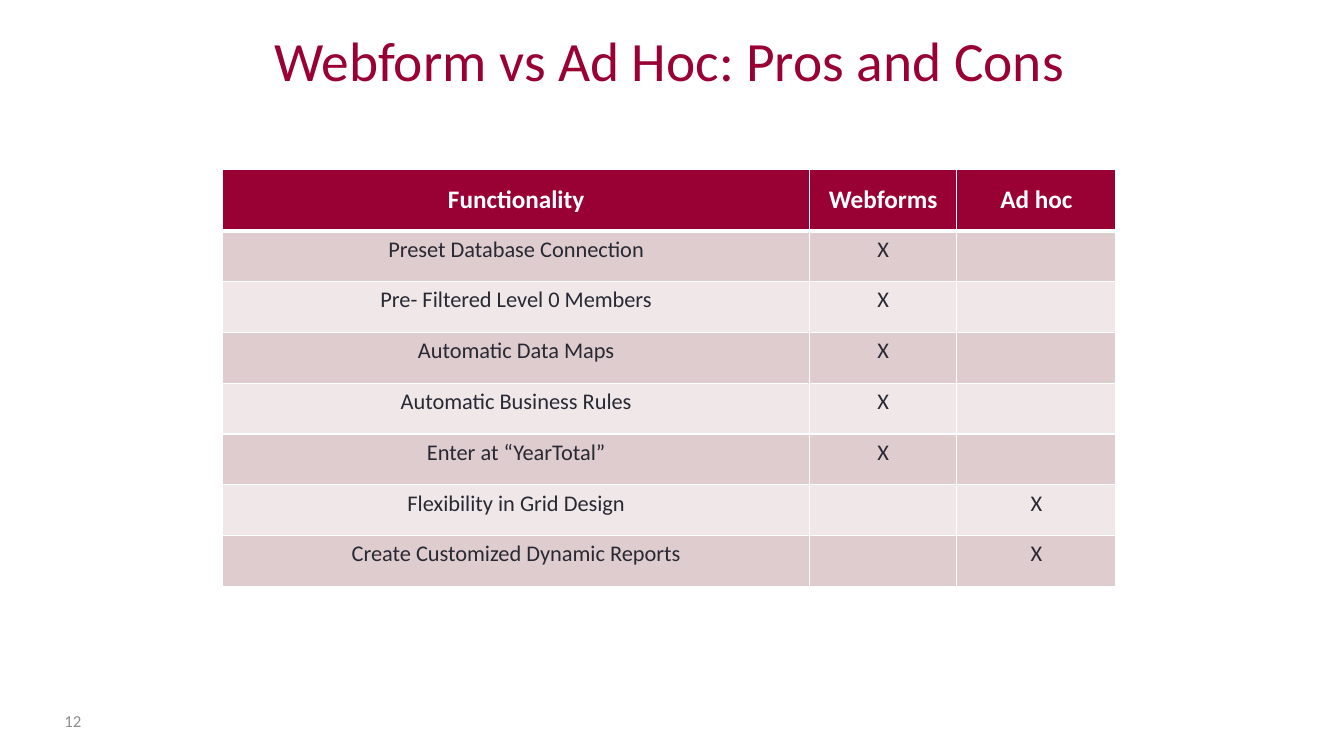
from lxml import etree
from pptx import Presentation, util as u
from pptx.dml.color import RGBColor
from pptx.enum import text
from pptx.oxml import ns

COLORS = {
    "crimson": "990033", "white": "FFFFFF", "ink": "292934",
    "gray": "8E8E90", "dark band": "DECCCE", "light band": "EFE7E8",
}
FONT = "Calibri"
HEADINGS = ["Functionality", "Webforms", "Ad hoc"]
FEATURES = [
    ("Preset Database Connection", "X", ""),
    ("Pre- Filtered Level 0 Members", "X", ""),
    ("Automatic Data Maps", "X", ""),
    ("Automatic Business Rules", "X", ""),
    ("Enter at “YearTotal”", "X", ""),
    ("Flexibility in Grid Design", "", "X"),
    ("Create Customized Dynamic Reports", "", "X"),
]
COLUMN_WIDTHS = [5.82, 1.46, 1.58]
HEADER_HEIGHT, ROW_HEIGHT = 0.61, 0.504


def write(frame, words, size, color, align, bold=False):
    frame.text = words
    paragraph = frame.paragraphs[0]
    paragraph.alignment = align
    for run in paragraph.runs:
        run.font.name = FONT
        run.font.size = u.Pt(size)
        run.font.bold = bold
        run.font.color.rgb = RGBColor.from_string(COLORS[color])


def add_borders(cell, bottom_width):
    """Draw white cell edges, 1 pt except for the bottom one."""
    properties = cell._tc.get_or_add_tcPr()
    for side, width in (("L", 1), ("R", 1), ("T", 1), ("B", bottom_width)):
        line = etree.SubElement(properties, ns.qn(f"a:ln{side}"), w=str(u.Pt(width)))
        fill = etree.SubElement(line, ns.qn("a:solidFill"))
        etree.SubElement(fill, ns.qn("a:srgbClr"), val=COLORS["white"])


presentation = Presentation()
presentation.slide_width = u.Inches(13.33)
presentation.slide_height = u.Inches(7.5)
slide = presentation.slides.add_slide(presentation.slide_layouts[6])

center, left = text.PP_ALIGN.CENTER, text.PP_ALIGN.LEFT
bottom, middle = text.MSO_ANCHOR.BOTTOM, text.MSO_ANCHOR.MIDDLE
labels = [
    ("Webform vs Ad Hoc: Pros and Cons", (0.31, 0.22, 12.66, 0.75), 39.6, "crimson", center, bottom),
    ("12", (0.54, 6.95, 0.56, 0.4), 12, "gray", left, middle),
]
for words, box, size, color, align, anchor in labels:
    frame = slide.shapes.add_textbox(*map(u.Inches, box)).text_frame
    frame.word_wrap = True
    frame.vertical_anchor = anchor
    write(frame, words, size, color, align)

table_height = HEADER_HEIGHT + ROW_HEIGHT * len(FEATURES)
table = slide.shapes.add_table(
    len(FEATURES) + 1, len(HEADINGS), u.Inches(2.21), u.Inches(1.68),
    u.Inches(sum(COLUMN_WIDTHS)), u.Inches(table_height)).table
for column, width in zip(table.columns, COLUMN_WIDTHS):
    column.width = u.Inches(width)

for row_index, row_words in enumerate([HEADINGS, *FEATURES]):
    is_header = row_index == 0
    if is_header:
        band = "crimson"
    else:
        band = "dark band" if row_index % 2 else "light band"
    table.rows[row_index].height = u.Inches(HEADER_HEIGHT if is_header else ROW_HEIGHT)
    for column_index, words in enumerate(row_words):
        cell = table.cell(row_index, column_index)
        add_borders(cell, 3 if is_header else 1)
        cell.fill.solid()
        cell.fill.fore_color.rgb = RGBColor.from_string(COLORS[band])
        if is_header:
            cell.vertical_anchor = middle
            write(cell.text_frame, words, 18, "white", center, bold=True)
        else:
            write(cell.text_frame, words, 16, "ink", center)

presentation.save("out.pptx")
